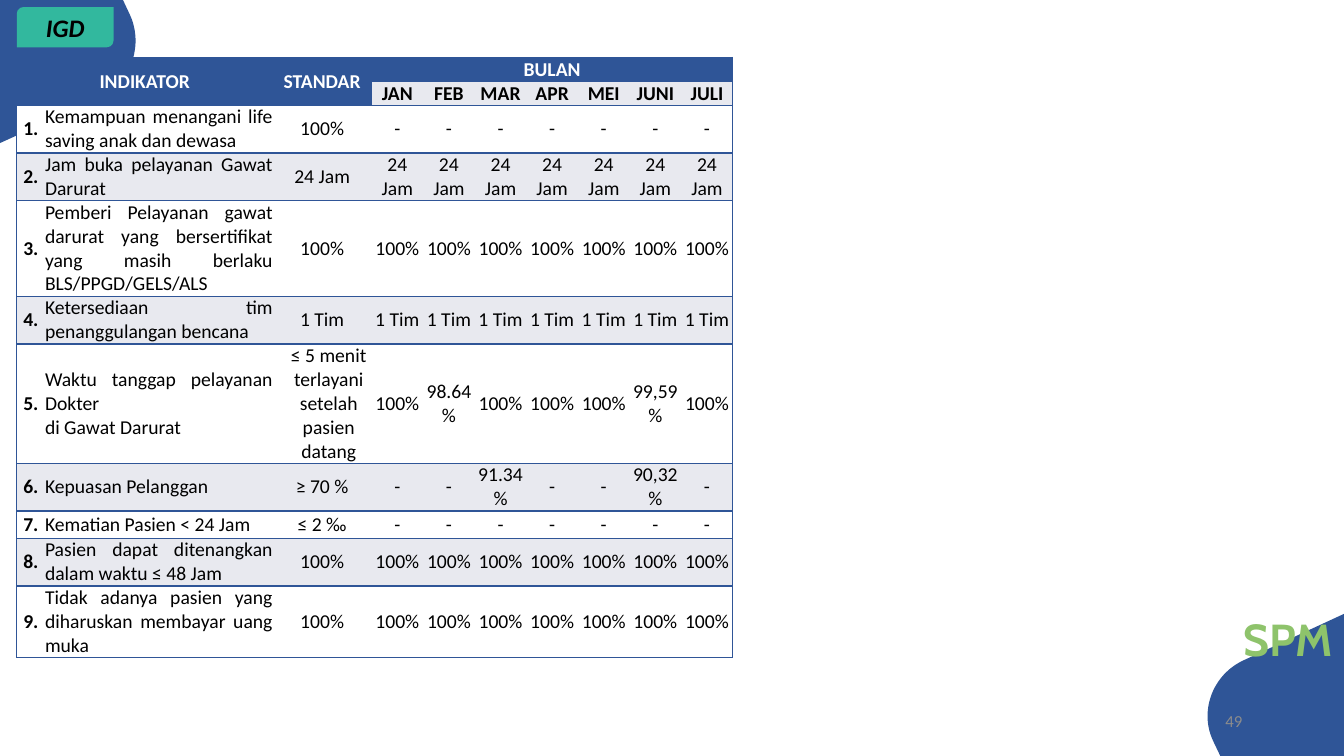
from lxml.etree import SubElement
from pptx import Presentation
from pptx.dml.color import RGBColor as RGB
from pptx.enum.shapes import MSO_SHAPE as Shape
from pptx.enum.text import MSO_ANCHOR as Anchor, PP_ALIGN as Align
from pptx.oxml.ns import qn
from pptx.util import Inches, Pt

BLUE = RGB(0x2F, 0x55, 0x97)
TEAL = RGB(0x32, 0xB8, 0x9E)
GREEN = RGB(0x8E, 0xC3, 0x6B)
PALE = RGB(0xE8, 0xE9, 0xEF)
GREY = RGB(0x8C, 0x8C, 0x8C)
WHITE = RGB(255, 255, 255)
BLACK = RGB(0, 0, 0)

deck = Presentation()
deck.slide_width, deck.slide_height = Inches(13.33), Inches(7.5)
slide = deck.slides.add_slide(deck.slide_layouts[6])
shapes = slide.shapes


def share(*pairs):
    sizes = deck.slide_width, deck.slide_height
    return [round(n * sizes[i % 2] / 100) for i, n in enumerate(pairs)]


def write(frame, text, size, color, bold=False, align=Align.CENTER, face="Calibri"):
    frame.text = text
    frame.word_wrap = True
    frame.vertical_anchor = Anchor.MIDDLE
    for para in frame.paragraphs:
        para.alignment = align
        font = para.font
        font.name, font.size, font.bold = face, Pt(size), bold
        font.color.rgb = color


corners = [
    ([(100, 100), (90.8, 100)],
     [(90.3, 98.13), (89.18, 94.13), (90.23, 89.2), (92.55, 87.33)],
     (100, 81.2)),
    ([(0, 0), (9.15, 0)],
     [(9.68, 2), (10.73, 6.13), (9.68, 11.07), (7.43, 12.93)],
     (0, 18.93)),
]
STEPS = 24
for head, bend, tail in corners:
    curve = []
    for step in range(STEPS + 1):
        t = step / STEPS
        mix = (1 - t) ** 3, 3 * t * (1 - t) ** 2, 3 * t * t * (1 - t), t ** 3
        curve.append([sum(m * p[axis] for m, p in zip(mix, bend)) for axis in (0, 1)])
    dots = [share(*dot) for dot in [*head, *curve, tail]]
    pen = shapes.build_freeform(*dots[0])
    pen.add_line_segments(dots[1:], close=True)
    blob = pen.convert_to_shape()
    blob.shadow.inherit = False
    blob.fill.solid()
    blob.fill.fore_color.rgb = BLUE
    blob.line.fill.background()

FULL = ["100%"] * 7
NONE = ["-"] * 7
months = ["JAN", "FEB", "MAR", "APR", "MEI", "JUNI", "JULI"]
items = [
    ("Kemampuan menangani life saving anak dan dewasa", "100%", NONE, 2),
    ("Jam buka pelayanan Gawat Darurat", "24 Jam", ["24 Jam"] * 7, 2),
    ("Pemberi Pelayanan gawat darurat yang bersertifikat yang masih berlaku "
     "BLS/PPGD/GELS/ALS", "100%", FULL, 4),
    ("Ketersediaan tim penanggulangan bencana", "1 Tim", ["1 Tim"] * 7, 2),
    ("Waktu tanggap pelayanan Dokter\ndi Gawat Darurat",
     "≤ 5 menit terlayani setelah pasien datang",
     ["100%", "98.64%", "100%", "100%", "100%", "99,59%", "100%"], 5),
    ("Kepuasan Pelanggan", "≥ 70 %", ["-", "-", "91.34%", "-", "-", "90,32%", "-"], 2),
    ("Kematian Pasien < 24 Jam", "≤ 2 ‰", NONE, 1.15),
    ("Pasien dapat ditenangkan dalam waktu ≤ 48 Jam", "100%", FULL, 2),
    ("Tidak adanya pasien yang diharuskan membayar uang muka", "100%", FULL, 3),
]
rows = [["INDIKATOR", "", "STANDAR", "BULAN"] + [""] * 6, [""] * 3 + months]
rows += [[f"{n}.", name, goal, *vals] for n, (name, goal, vals, _) in enumerate(items, 1)]
lines = [1, 1] + [item[3] for item in items]
widths = [2.1, 16.95, 7.35] + [3.84] * 7

LINE = Pt(17)
left, top, wide = share(1.25, 7.6, sum(widths))
grid = shapes.add_table(len(rows), len(widths), left, top, wide, int(LINE * sum(lines))).table
grid.horz_banding = False
for col, width in zip(grid.columns, widths):
    col.width = share(width)[0]
for row, count in zip(grid.rows, lines):
    row.height = int(LINE * count)
for start, end in [((0, 0), (1, 1)), ((0, 2), (1, 2)), ((0, 3), (0, 9))]:
    grid.cell(*start).merge(grid.cell(*end))

for r, row in enumerate(rows):
    for c, text in enumerate(row):
        cell = grid.cell(r, c)
        title = r == 0 or (r == 1 and c < 3)
        cell.margin_left = cell.margin_right = cell.margin_top = cell.margin_bottom = 0
        cell.vertical_anchor = Anchor.MIDDLE
        cell.fill.solid()
        cell.fill.fore_color.rgb = BLUE if title else PALE if r % 2 else WHITE
        if not cell.is_spanned:
            write(cell.text_frame, text, 14, WHITE if title else BLACK, r < 2 or c == 0,
                  Align.JUSTIFY if r > 1 and c == 1 else Align.CENTER)
            cell.vertical_anchor = Anchor.MIDDLE
        props = cell._tc.get_or_add_tcPr()
        edges = {"L": c == 0, "R": c == 9 or (r, c) == (0, 3), "T": True, "B": True}
        for i, (side, shown) in enumerate(edges.items()):
            edge = SubElement(props, qn(f"a:ln{side}"), w=str(Pt(1)))
            if shown:
                paint = SubElement(edge, qn("a:solidFill"))
                SubElement(paint, qn("a:srgbClr"), val=str(BLUE))
            else:
                SubElement(edge, qn("a:noFill"))
            props.insert(i, edge)
goal = grid.cell(6, 2).text_frame.paragraphs[0]
goal._p.get_or_add_pPr().set("marL", str(Inches(0.13)))

mark = shapes.add_textbox(*share(92.5, 80.9, 7.5, 7.2)).text_frame
mark.margin_left = mark.margin_right = 0
write(mark, "SPM", 32, GREEN, True, Align.LEFT, "Cabin")

tag = shapes.add_shape(Shape.ROUND_2_DIAG_RECTANGLE, *share(1.25, 0.93, 7.2, 5.33))
tag.shadow.inherit = False
tag.fill.solid()
tag.fill.fore_color.rgb = TEAL
tag.line.fill.background()
write(tag.text_frame, "IGD", 18, BLACK, True)
tag.text_frame.paragraphs[0].font.italic = True

page = shapes.add_textbox(*share(70.67, 92.67, 22.5, 5.33)).text_frame
write(page, "49", 12, GREY, align=Align.RIGHT)

deck.save("out.pptx")
